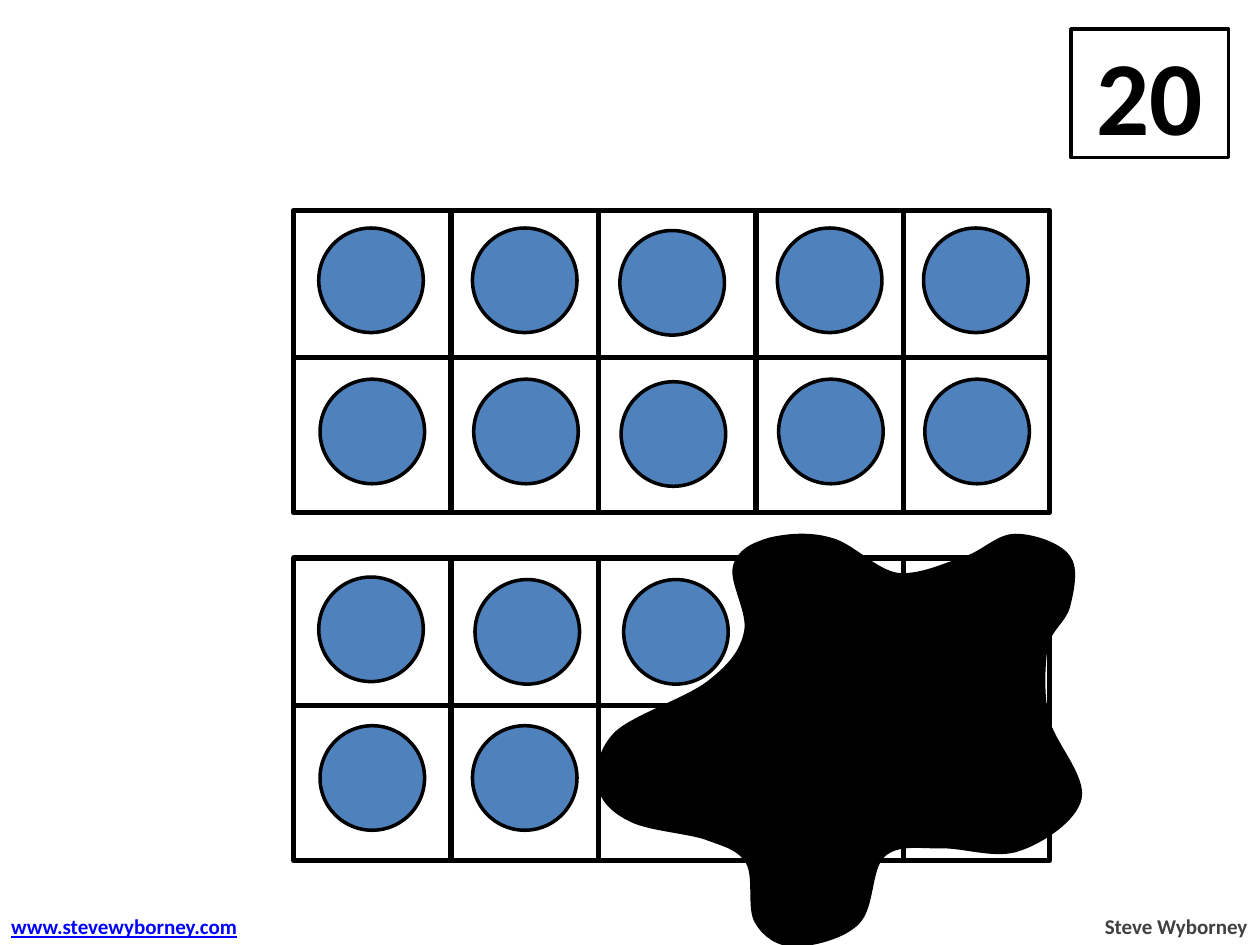
from dataclasses import dataclass

from lxml import etree
from pptx import Presentation
from pptx import util as u
from pptx.dml.color import RGBColor
from pptx.enum import shapes as es, text as et
from pptx.oxml.ns import qn

SCALE = 9144  # EMU per px, 100 px to the inch


@dataclass(frozen=True)
class Theme:
    ink: str = "000000"
    paper: str = "FFFFFF"
    dot: str = "4F81BD"
    link: str = "0000FF"
    grey: str = "404040"
    font: str = "Calibri"
    big: int = 60
    small: int = 12
    thin: int = 2
    thick: int = 3


T = Theme()
DOT = 83
COLS = (358, 475, 600, 717)
TOP_DOTS = ((253, 181), (375, 181), (492, 183), (617, 181), (733, 181))
LOW_DOTS = (
    (253, 458), (377, 460), (495, 460), (619, 460), (735, 461),
    (254, 576), (375, 576), (496, 576), (617, 578), (733, 577),
)

# Each row is one Bezier curve: two controls and an end point.
START = (501, 651)
CURVES = (
    (486, 644, 477, 634, 475, 622),
    (474, 611, 476, 594, 490, 581),
    (505, 568, 545, 555, 562, 542),
    (579, 529, 589, 517, 592, 501),
    (595, 486, 580, 462, 583, 450),
    (586, 437, 598, 432, 611, 428),
    (624, 425, 642, 423, 659, 428),
    (676, 432, 694, 453, 712, 456),
    (730, 458, 750, 448, 766, 443),
    (781, 438, 792, 425, 806, 425),
    (820, 425, 841, 432, 848, 442),
    (855, 451, 851, 469, 848, 481),
    (845, 493, 833, 499, 830, 514),
    (828, 529, 827, 550, 831, 570),
    (836, 590, 861, 616, 857, 634),
    (853, 651, 827, 668, 809, 674),
    (790, 681, 764, 671, 746, 672),
    (728, 672, 712, 669, 701, 679),
    (690, 689, 693, 720, 681, 732),
    (670, 744, 644, 750, 631, 750),
    (617, 750, 606, 742, 600, 731),
    (594, 720, 600, 695, 593, 684),
    (586, 673, 576, 671, 560, 665),
    (545, 660, 515, 658, 501, 651),
)


def px(*nums):
    return [u.Emu(n * SCALE) for n in nums]


def rgb(code):
    return RGBColor.from_string(code)


def style(shape, fill, width):
    shape.shadow.inherit = False
    if fill:
        shape.fill.solid()
        shape.fill.fore_color.rgb = rgb(fill)
    else:
        shape.fill.background()
    shape.line.color.rgb = rgb(T.ink)
    shape.line.width = u.Pt(width)


def add_form(parent, kind, box, fill, width):
    shape = parent.add_shape(kind, *px(*box))
    style(shape, fill, width)
    return shape


def add_dots(parent, spots):
    for x, y in spots:
        add_form(parent, es.MSO_SHAPE.OVAL, (x, y, DOT, DOT), T.dot, T.thin)


def add_line(parent, *ends):
    line = parent.add_connector(es.MSO_CONNECTOR.STRAIGHT, *px(*ends))
    line.line.color.rgb = rgb(T.ink)
    line.line.width = u.Pt(T.thick)
    etree.SubElement(line._element.spPr, qn("a:effectLst"))


def add_frame(parent, top):
    """Draw an open ten-frame: five columns by two rows."""
    add_form(parent, es.MSO_SHAPE.RECTANGLE, (233, top, 600, 240), None, T.thick)
    for x in COLS:
        add_line(parent, x, top, x, top + 240)
    add_line(parent, 235, top + 117, 835, top + 117)


def add_run(par, words, size, color, under=False):
    run = par.add_run()
    run.text = words
    font = run.font
    font.name, font.size, font.bold = T.font, u.Pt(size), True
    font.color.rgb = rgb(color)
    if under:
        font.underline = True


def add_note(parent, box, words, color, align, under=False):
    frame = parent.add_textbox(*px(*box)).text_frame
    frame.word_wrap = False
    frame.auto_size = et.MSO_AUTO_SIZE.SHAPE_TO_FIT_TEXT
    par = frame.paragraphs[0]
    par.alignment = align
    add_run(par, words, T.small, color, under)


def add_card(parent, box, words):
    card = add_form(parent, es.MSO_SHAPE.RECTANGLE, box, T.paper, T.thin)
    frame = card.text_frame
    frame.vertical_anchor = et.MSO_ANCHOR.MIDDLE
    par = frame.paragraphs[0]
    par.alignment = et.PP_ALIGN.CENTER
    add_run(par, words, T.big, T.ink)


def bend(shape, curves):
    """Turn each straight segment of a freeform into a Bezier curve."""
    left, top = shape.left, shape.top
    lines = list(shape._element.iter(qn("a:lnTo")))
    for line, curve in zip(lines, curves):
        line.tag = qn("a:cubicBezTo")
        for child in list(line):
            line.remove(child)
        for x, y in zip(px(*curve[::2]), px(*curve[1::2])):
            etree.SubElement(line, qn("a:pt"), x=str(x - left), y=str(y - top))


def add_splat(parent):
    pen = parent.build_freeform(*px(*START), scale=1.0)
    pen.add_line_segments([px(*c[4:]) for c in CURVES], close=True)
    shape = pen.convert_to_shape()
    bend(shape, CURVES)
    style(shape, T.ink, T.thin)


def main():
    deck = Presentation()
    deck.slide_width, deck.slide_height = px(1000, 750)
    parts = deck.slides.add_slide(deck.slide_layouts[6]).shapes

    add_dots(parts, LOW_DOTS)
    add_note(parts, (866, 720, 134, 30), "Steve Wyborney", T.grey,
             et.PP_ALIGN.RIGHT)
    add_card(parts, (850, 23, 125, 102), "20")
    add_splat(parts)
    add_note(parts, (-1, 720, 205, 30), "www.stevewyborney.com", T.link,
             et.PP_ALIGN.LEFT, under=True)
    add_frame(parts.add_group_shape().shapes, 443)

    upper = parts.add_group_shape().shapes
    add_dots(upper, TOP_DOTS)
    add_dots(upper, [(x + 1, y + 120) for x, y in TOP_DOTS])
    add_frame(upper, 167)

    deck.save("out.pptx")


if __name__ == "__main__":
    main()
